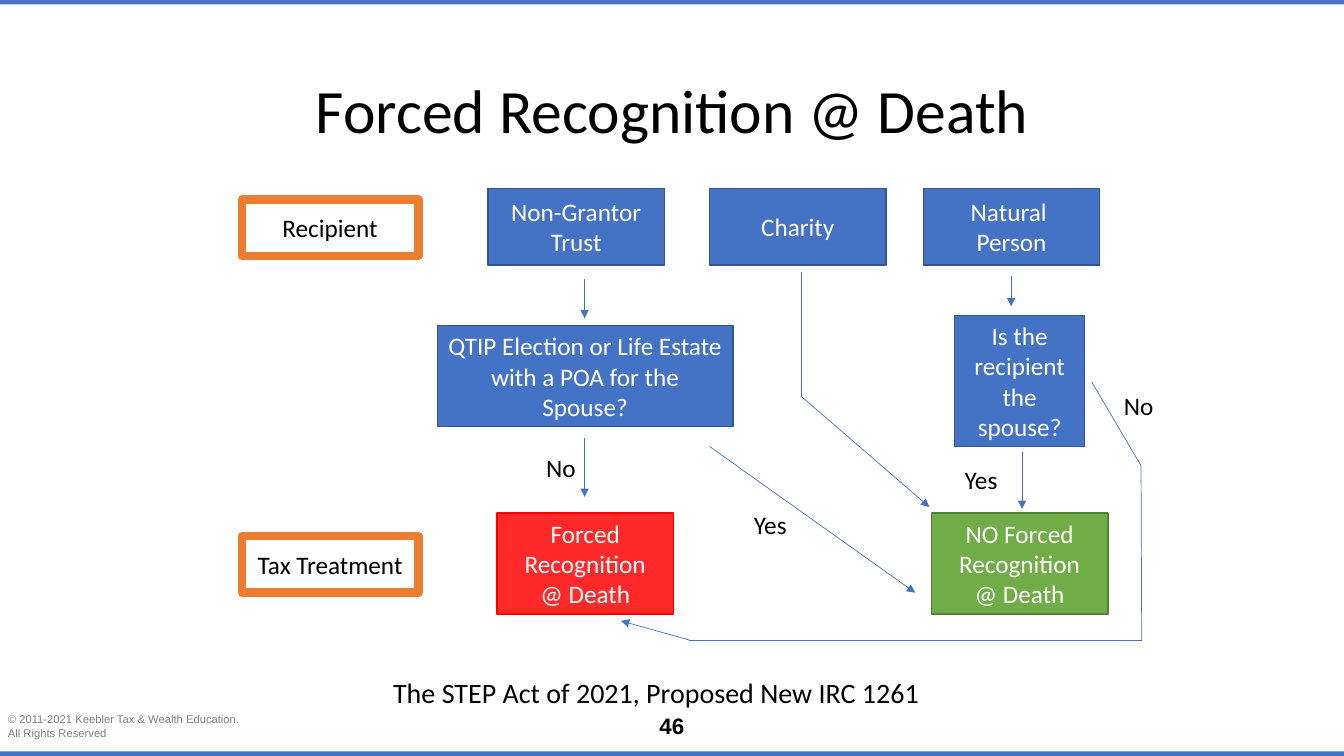
"""Build the Forced Recognition @ Death flowchart slide."""
from lxml import etree
from pptx import Presentation
from pptx.dml.color import RGBColor
from pptx.enum.shapes import MSO_CONNECTOR, MSO_SHAPE
from pptx.enum.text import MSO_ANCHOR, PP_ALIGN
from pptx.oxml.ns import qn
from pptx.util import Inches, Pt

RECTANGLE = MSO_SHAPE.RECTANGLE
STRAIGHT = MSO_CONNECTOR.STRAIGHT
TOP, MIDDLE = MSO_ANCHOR.TOP, MSO_ANCHOR.MIDDLE
LEFT, CENTER = PP_ALIGN.LEFT, PP_ALIGN.CENTER

BLUE = RGBColor(0x44, 0x72, 0xC4)
DARK_BLUE = RGBColor(0x32, 0x54, 0x91)
ORANGE = RGBColor(0xED, 0x7D, 0x31)
GREEN = RGBColor(0x70, 0xAD, 0x47)
DARK_GREEN = RGBColor(0x53, 0x80, 0x35)
LIGHT_RED = RGBColor(0xFF, 0x29, 0x29)
RED = RGBColor(0xFF, 0x00, 0x00)
GRAY = RGBColor(0x7F, 0x7F, 0x7F)
WHITE = RGBColor(0xFF, 0xFF, 0xFF)
BLACK = RGBColor(0x00, 0x00, 0x00)

presentation = Presentation()
presentation.slide_width = Inches(13.33)
presentation.slide_height = Inches(7.5)
slide = presentation.slides.add_slide(presentation.slide_layouts[6])


def place(*shares):
    """Turn alternating percentages of slide width and height into lengths."""
    sizes = (presentation.slide_width, presentation.slide_height) * 2
    return [round(size * share / 100) for size, share in zip(sizes, shares)]


def write(shape, text, color, size=18, name="Calibri", bold=False,
          align=CENTER, anchor=MIDDLE, wrap=True, spacing=1.0):
    """Fill a shape with one paragraph per line of text."""
    frame = shape.text_frame
    frame.text = text
    frame.word_wrap = wrap
    frame.vertical_anchor = anchor
    font_format = {"size": Pt(size), "name": name, "bold": bold}
    for paragraph in frame.paragraphs:
        paragraph.alignment = align
        paragraph.line_spacing = spacing
        for attribute, value in font_format.items():
            setattr(paragraph.font, attribute, value)
        paragraph.font.color.rgb = color


for bar_top in (0, 99.4):
    bar = slide.shapes.add_shape(RECTANGLE, *place(0, bar_top, 100, 0.6))
    bar.shadow.inherit = False
    bar.fill.solid()
    bar.fill.fore_color.rgb = BLUE
    bar.line.fill.background()

BOX_WIDTH = 13.13
RECIPIENT_TOP, RECIPIENT_HEIGHT = 24.93, 10.13
OUTCOME_TOP, TALL_HEIGHT = 67.87, 13.33
LABEL_LEFT, LABEL_HEIGHT = 18, 7.47

question = {"fill": BLUE, "line": DARK_BLUE, "width": 1, "text": WHITE}
label = {"fill": WHITE, "line": ORANGE, "width": 6, "text": BLACK}
taxed = {"fill": LIGHT_RED, "line": RED, "width": 1, "text": WHITE}
untaxed = {"fill": GREEN, "line": DARK_GREEN, "width": 1, "text": WHITE}

boxes = [
    ("Recipient", label, (LABEL_LEFT, 26.4, BOX_WIDTH, LABEL_HEIGHT)),
    ("Tax Treatment", label, (LABEL_LEFT, 70.93, BOX_WIDTH, LABEL_HEIGHT)),
    ("Non-Grantor Trust", question, (36.3, RECIPIENT_TOP, BOX_WIDTH, RECIPIENT_HEIGHT)),
    ("Charity", question, (52.8, RECIPIENT_TOP, BOX_WIDTH, RECIPIENT_HEIGHT)),
    ("Natural \nPerson", question, (68.7, RECIPIENT_TOP, BOX_WIDTH, RECIPIENT_HEIGHT)),
    ("QTIP Election or Life Estate with a POA for the Spouse?", question,
     (32.55, 43.07, 21.98, TALL_HEIGHT)),
    ("Is the recipient the spouse?", question, (71.03, 41.73, 9.68, 17.33)),
    ("Forced Recognition\n@ Death", taxed, (36.98, OUTCOME_TOP, BOX_WIDTH, TALL_HEIGHT)),
    ("NO Forced Recognition\n@ Death", untaxed, (69.3, OUTCOME_TOP, BOX_WIDTH, TALL_HEIGHT)),
]
for text, style, shares in boxes:
    box = slide.shapes.add_shape(RECTANGLE, *place(*shares))
    box.shadow.inherit = False
    box.fill.solid()
    box.fill.fore_color.rgb = style["fill"]
    box.line.color.rgb = style["line"]
    box.line.width = Pt(style["width"])
    write(box, text, style["text"])

routes = [
    [(43.5, 36.93), (43.5, 42.13)],
    [(43.5, 58), (43.5, 65.73)],
    [(52.8, 59.07), (68.1, 78.4)],
    [(59.6, 36), (59.6, 52.4), (69.15, 67.07)],
    [(75.23, 36.53), (75.23, 40.53)],
    [(76.05, 59.73), (76.05, 67.33)],
    [(81.23, 50.53), (84.9, 61.6), (84.95, 84.67), (51.3, 84.67), (46.2, 82.13)],
]
for route in routes:
    for start, end in zip(route, route[1:]):
        connector = slide.shapes.add_connector(STRAIGHT, *place(*start, *end))
        connector.line.color.rgb = BLUE
        connector.line.width = Pt(0.5)
        properties = connector._element.spPr
        if end == route[-1]:
            etree.SubElement(properties.find(qn("a:ln")), qn("a:tailEnd"), type="triangle")
        etree.SubElement(properties, qn("a:effectLst"))

answer = {"color": BLACK, "align": LEFT, "anchor": TOP, "wrap": False}
captions = [
    ("Forced Recognition @ Death", (6.9, 5.33, 86.25, 19.33),
     {"color": BLACK, "size": 44, "spacing": 0.9}),
    ("The STEP Act of 2021, Proposed New IRC 1261", (16.5, 88.27, 64.65, 7.2),
     {"color": BLACK, "size": 20, "spacing": 0.9}),
    ("No", (39.9, 59.2, 3.75, 5.33), answer),
    ("Yes", (55.35, 66.67, 3.98, 5.33), answer),
    ("Yes", (71.03, 60.8, 5.1, 5.33), answer),
    ("No", (82.88, 50.93, 3.75, 5.33), answer),
    ("© 2011-2021 Keebler Tax & Wealth Education.\nAll Rights Reserved",
     (-0.15, 93.6, 19.13, 4.93),
     {"color": GRAY, "size": 8, "name": "Arial", "align": LEFT, "anchor": TOP, "wrap": False}),
    ("46", (47.18, 93.6, 5.63, 4.93),
     {"color": BLACK, "size": 16, "name": "Arial", "bold": True, "anchor": TOP}),
]
for text, shares, text_format in captions:
    write(slide.shapes.add_textbox(*place(*shares)), text, **text_format)

presentation.save("out.pptx")
